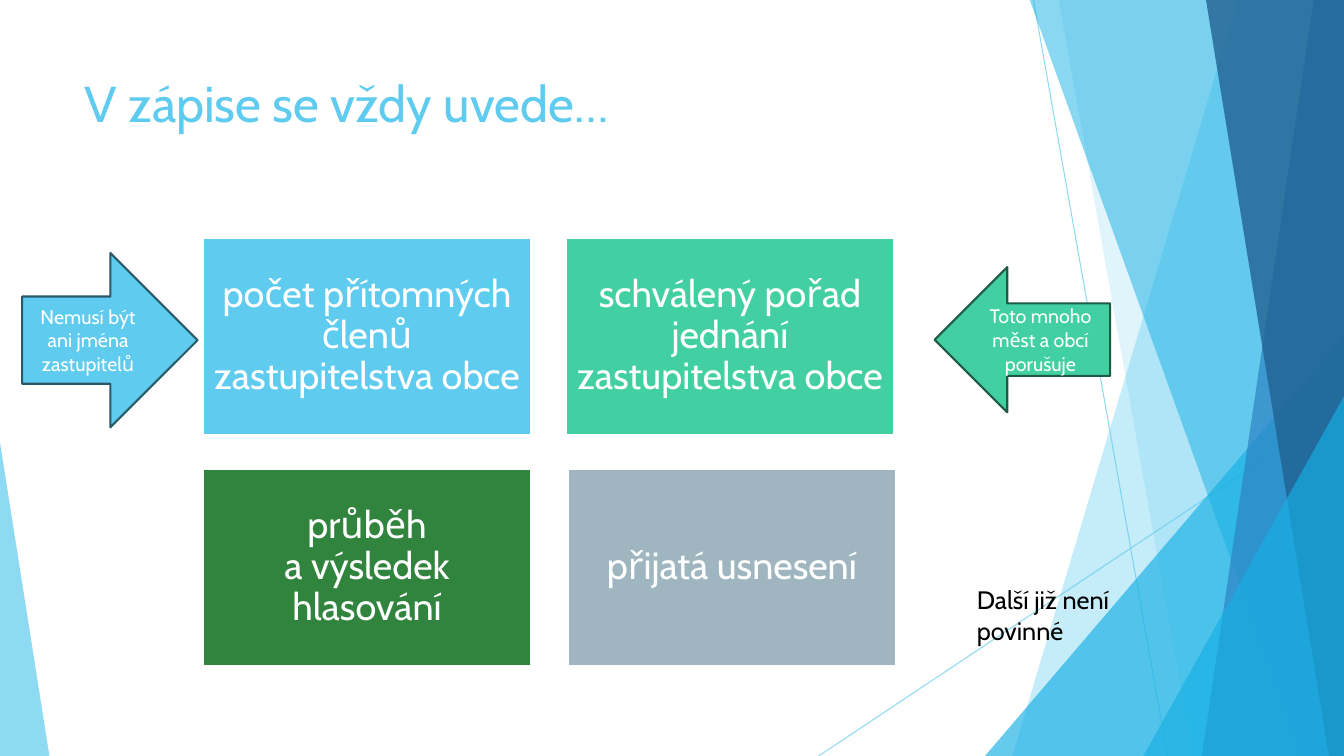
from dataclasses import dataclass

from lxml.etree import SubElement
from pptx import Presentation
from pptx.dml.color import RGBColor
from pptx.enum.shapes import MSO_CONNECTOR, MSO_SHAPE
from pptx.enum.text import MSO_ANCHOR, PP_ALIGN
from pptx.oxml.ns import qn
from pptx.util import Inches, Pt

SKY = RGBColor(0x5F, 0xCB, 0xEF)
AZURE = RGBColor(0x17, 0xB0, 0xE4)
BLUE = RGBColor(0x2E, 0x83, 0xC3)
NAVY = RGBColor(0x22, 0x62, 0x92)
MINT = RGBColor(0x42, 0xD0, 0xA2)
GREEN = RGBColor(0x31, 0x84, 0x3D)
GRAY = RGBColor(0x9F, 0xB6, 0xC0)
DARK_SKY = RGBColor(0x2A, 0x59, 0x69)
DARK_MINT = RGBColor(0x1D, 0x5B, 0x47)
WHITE = RGBColor(0xFF, 0xFF, 0xFF)
BLACK = RGBColor(0, 0, 0)
FONT = "Cabin"
WIDTH, HEIGHT = 13.33, 7.5
BAND_TOP = -0.01
CARD_WIDTH, CARD_HEIGHT = 3.26, 1.96


@dataclass
class Ray:
    start: tuple[float, float]
    end: tuple[float, float]


@dataclass
class Band:
    top_x: float
    bottom_x: float
    color: RGBColor
    opacity: int


@dataclass
class Wedge:
    left: float
    top: float
    width: float
    apex: float
    color: RGBColor
    opacity: int


@dataclass
class Block:
    geometry: MSO_SHAPE
    left: float
    top: float
    width: float
    height: float
    fill: RGBColor
    outline: RGBColor
    size: int
    spacing: float
    lines: list[str]


def card(left: float, top: float, fill: RGBColor, *lines: str) -> Block:
    return Block(MSO_SHAPE.RECTANGLE, left, top, CARD_WIDTH, CARD_HEIGHT,
                 fill, WHITE, 27, 0.9, list(lines))


DECORATION = [
    Ray((10.25, 0), (11.58, HEIGHT)),
    Ray((WIDTH, 4.03), (8.12, HEIGHT)),
    Band(12.28, 10.04, SKY, 36),
    Band(10.5, 11.83, SKY, 20),
    Wedge(9.77, 3.33, 3.56, 1, AZURE, 66),
    Band(10.21, 12.91, AZURE, 50),
    Band(13.03, 11.92, BLUE, 70),
    Band(11.96, 13.18, NAVY, 80),
    Wedge(11.34, 3.93, 1.99, 1, AZURE, 66),
    Wedge(0, 4.39, 0.49, 0, SKY, 70),
]
CARDS = [
    card(2.01, 2.36, SKY, "počet přítomných členů zastupitelstva obce"),
    card(5.61, 2.36, MINT, "schválený pořad jednání zastupitelstva obce"),
    card(2.01, 4.65, GREEN, "průběh", "a výsledek hlasování"),
    card(5.63, 4.65, GRAY, "přijatá usnesení"),
]
ARROWS = [
    Block(MSO_SHAPE.RIGHT_ARROW, 0.22, 2.51, 1.74, 1.73, SKY, DARK_SKY, 14, 1.0,
          ["Nemusí být ani jména zastupitelů"]),
    Block(MSO_SHAPE.LEFT_ARROW, 9.27, 2.65, 1.74, 1.44, MINT, DARK_MINT, 14, 1.0,
          ["Toto mnoho měst a obcí porušuje"]),
]


def set_opacity(properties, percent: int) -> None:
    color = next(properties.iter(qn("a:srgbClr")))
    SubElement(color, qn("a:alpha"), val=str(percent * 1000))


def tint(shape, color: RGBColor, opacity: int) -> None:
    shape.shadow.inherit = False
    shape.fill.solid()
    shape.fill.fore_color.rgb = color
    shape.line.fill.background()
    set_opacity(shape.fill._xPr, opacity)


def draw_ray(slide, ray: Ray) -> None:
    line = slide.shapes.add_connector(
        MSO_CONNECTOR.STRAIGHT, *map(Inches, ray.start + ray.end))
    line.line.color.rgb = SKY
    line.line.width = Pt(0.75)
    properties = line._element.spPr
    set_opacity(properties, 70)
    SubElement(properties, qn("a:effectLst"))


def draw_band(slide, band: Band) -> None:
    outline = slide.shapes.build_freeform(Inches(band.top_x), Inches(BAND_TOP))
    corners = [(WIDTH, BAND_TOP), (WIDTH, HEIGHT), (band.bottom_x, HEIGHT)]
    outline.add_line_segments([(Inches(x), Inches(y)) for x, y in corners])
    tint(outline.convert_to_shape(), band.color, band.opacity)


def draw_wedge(slide, wedge: Wedge) -> None:
    triangle = slide.shapes.add_shape(
        MSO_SHAPE.ISOSCELES_TRIANGLE, Inches(wedge.left), Inches(wedge.top),
        Inches(wedge.width), Inches(HEIGHT - wedge.top))
    triangle.adjustments[0] = wedge.apex
    tint(triangle, wedge.color, wedge.opacity)


def write(paragraph, text: str, size: int, color: RGBColor) -> None:
    paragraph.text = text
    paragraph.font.name = FONT
    paragraph.font.size = Pt(size)
    paragraph.font.color.rgb = color


def draw_block(slide, block: Block) -> None:
    shape = slide.shapes.add_shape(
        block.geometry, Inches(block.left), Inches(block.top),
        Inches(block.width), Inches(block.height))
    shape.shadow.inherit = False
    shape.fill.solid()
    shape.fill.fore_color.rgb = block.fill
    shape.line.color.rgb = block.outline
    shape.line.width = Pt(1.5)
    frame = shape.text_frame
    frame.word_wrap = True
    frame.vertical_anchor = MSO_ANCHOR.MIDDLE
    for index, text in enumerate(block.lines):
        paragraph = frame.add_paragraph() if index else frame.paragraphs[0]
        write(paragraph, text, block.size, WHITE)
        paragraph.alignment = PP_ALIGN.CENTER
        paragraph.line_spacing = block.spacing


def draw_text(slide, left: float, top: float, width: float, height: float,
              text: str, size: int, color: RGBColor) -> None:
    box = slide.shapes.add_textbox(
        Inches(left), Inches(top), Inches(width), Inches(height))
    box.text_frame.word_wrap = True
    write(box.text_frame.paragraphs[0], text, size, color)


def main() -> None:
    deck = Presentation()
    deck.slide_width, deck.slide_height = Inches(WIDTH), Inches(HEIGHT)
    slide = deck.slides.add_slide(deck.slide_layouts[6])
    painters = {Ray: draw_ray, Band: draw_band, Wedge: draw_wedge}
    for part in DECORATION:
        painters[type(part)](slide, part)
    draw_text(slide, 0.74, 0.67, 9.4, 1.44, "V zápise se vždy uvede…", 36, SKY)
    for block in CARDS:
        draw_block(slide, block)
    draw_text(slide, 9.59, 5.75, 2.37, 0.71, "Další již není povinné", 18, BLACK)
    for block in ARROWS:
        draw_block(slide, block)
    deck.save("out.pptx")


if __name__ == "__main__":
    main()
